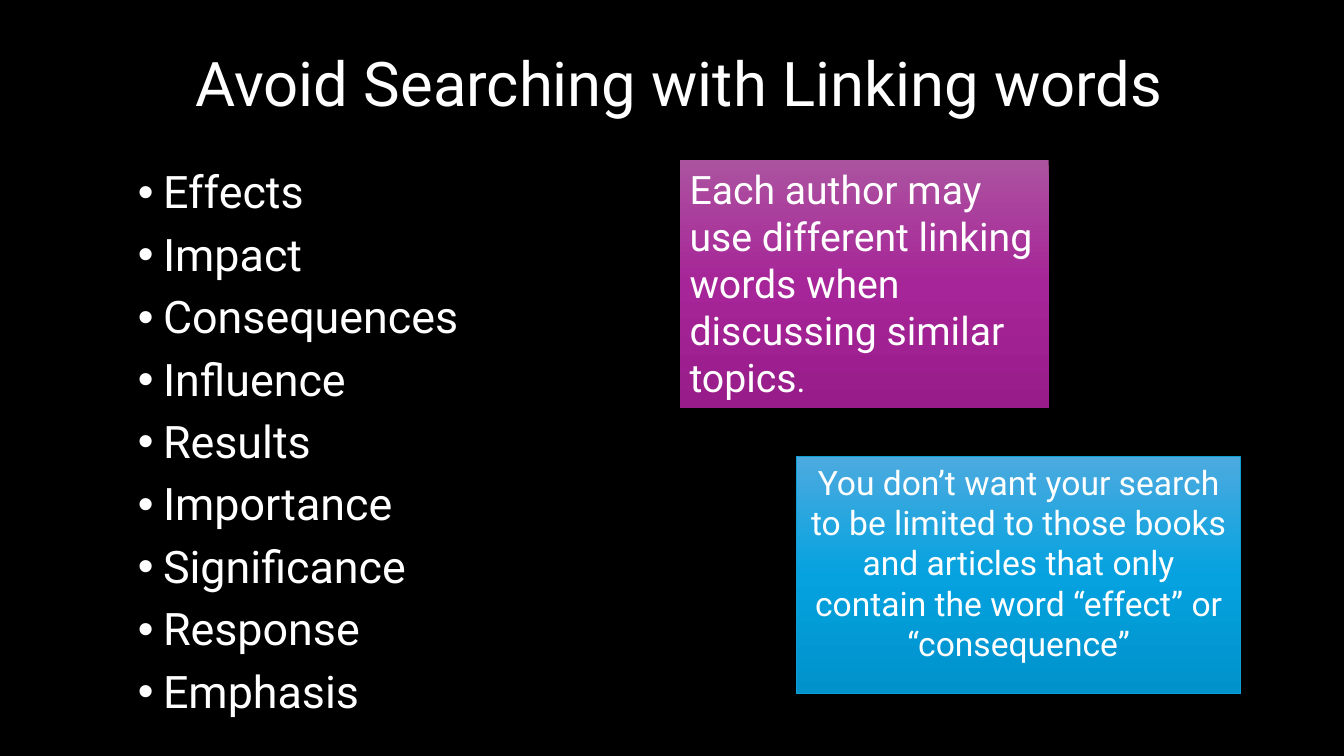
from copy import deepcopy

from lxml import etree
from pptx import Presentation
from pptx.dml.color import RGBColor
from pptx.enum.shapes import MSO_SHAPE
from pptx.enum.text import MSO_ANCHOR, PP_ALIGN
from pptx.oxml.ns import qn
from pptx.util import Pt

RECTANGLE = MSO_SHAPE.RECTANGLE
TOP, MIDDLE = MSO_ANCHOR.TOP, MSO_ANCHOR.MIDDLE
LEFT, CENTER = PP_ALIGN.LEFT, PP_ALIGN.CENTER

FONT = "Roboto"
COLORS = {
    "background": "000000",
    "text": "FFFFFF",
    "purple_top": "AC53A0",
    "purple_middle": "A62598",
    "purple_bottom": "991C8B",
    "blue_top": "4CAADF",
    "blue_middle": "05A2DF",
    "blue_bottom": "0092CB",
    "blue_line": "0F9ED5",
}
LINKING_WORDS = [
    "Effects", "Impact", "Consequences", "Influence", "Results",
    "Importance", "Significance", "Response", "Emphasis",
]
# text, hue, left, top, width, height, font size, alignment
CARDS = [
    ("Each author may use different linking words when discussing similar topics.",
     "purple", 485.5, 114.3, 263.5, 177, 28, LEFT),
    ("You don’t want your search to be limited to those books and articles "
     "that only contain the word “effect” or “consequence”",
     "blue", 568.8, 326.2, 317.5, 169.2, 24, CENTER),
]


def color(name):
    return RGBColor.from_string(COLORS[name])


def write_text(shape, text, size, alignment, anchor=TOP, line_spacing=1.0):
    """Fill the shape with wrapped white text, one paragraph per line."""
    text_frame = shape.text_frame
    text_frame.word_wrap = True
    text_frame.vertical_anchor = anchor
    text_frame.text = text
    for paragraph in text_frame.paragraphs:
        paragraph.alignment = alignment
        paragraph.line_spacing = line_spacing
        for run in paragraph.runs:
            run.font.name = FONT
            run.font.size = Pt(size)
            run.font.color.rgb = color("text")


presentation = Presentation()
presentation.slide_width = Pt(960)
presentation.slide_height = Pt(540)
slide = presentation.slides.add_slide(presentation.slide_layouts[6])
slide.background.fill.solid()
slide.background.fill.fore_color.rgb = color("background")

# Title
title = slide.shapes.add_textbox(Pt(85), Pt(23), Pt(801.4), Pt(77.8))
write_text(title, "Avoid Searching with Linking words", 44, CENTER, MIDDLE, 0.9)

# Bulleted linking words
word_list = slide.shapes.add_textbox(Pt(91.4), Pt(118), Pt(511.2), Pt(386.6))
write_text(word_list, "\n".join(LINKING_WORDS), 32, LEFT, line_spacing=0.9)
for paragraph in word_list.text_frame.paragraphs:
    paragraph.space_before = Pt(10)
    properties = paragraph._p.get_or_add_pPr()
    properties.set("marL", str(Pt(18)))
    properties.set("indent", str(Pt(-18)))
    etree.SubElement(properties, qn("a:buFont")).set("typeface", "Arial")
    etree.SubElement(properties, qn("a:buChar")).set("char", "•")

# Gradient cards
for text, hue, left, top, width, height, size, alignment in CARDS:
    card = slide.shapes.add_shape(RECTANGLE, Pt(left), Pt(top), Pt(width), Pt(height))
    card.shadow.inherit = False
    card.fill.gradient()
    card.fill.gradient_angle = 270
    stop_list = card._element.spPr.find(".//" + qn("a:gsLst"))
    stop_list.insert(1, deepcopy(stop_list[0]))
    for index, level in enumerate(("top", "middle", "bottom")):
        stop = card.fill.gradient_stops[index]
        stop.position = index / 2
        stop.color.rgb = color(f"{hue}_{level}")
    if hue == "blue":
        card.line.color.rgb = color("blue_line")
        card.line.width = Pt(1)
    else:
        card.line.fill.background()
    write_text(card, text, size, alignment)

# The closing full stop of the first card is smaller than its sentence
sentence = slide.shapes[2].text_frame.paragraphs[0]
sentence.runs[0].text = sentence.text.rstrip(".")
full_stop = sentence.add_run()
full_stop.text = "."
full_stop.font.name = FONT
full_stop.font.size = Pt(24)
full_stop.font.color.rgb = color("text")

presentation.save("out.pptx")
